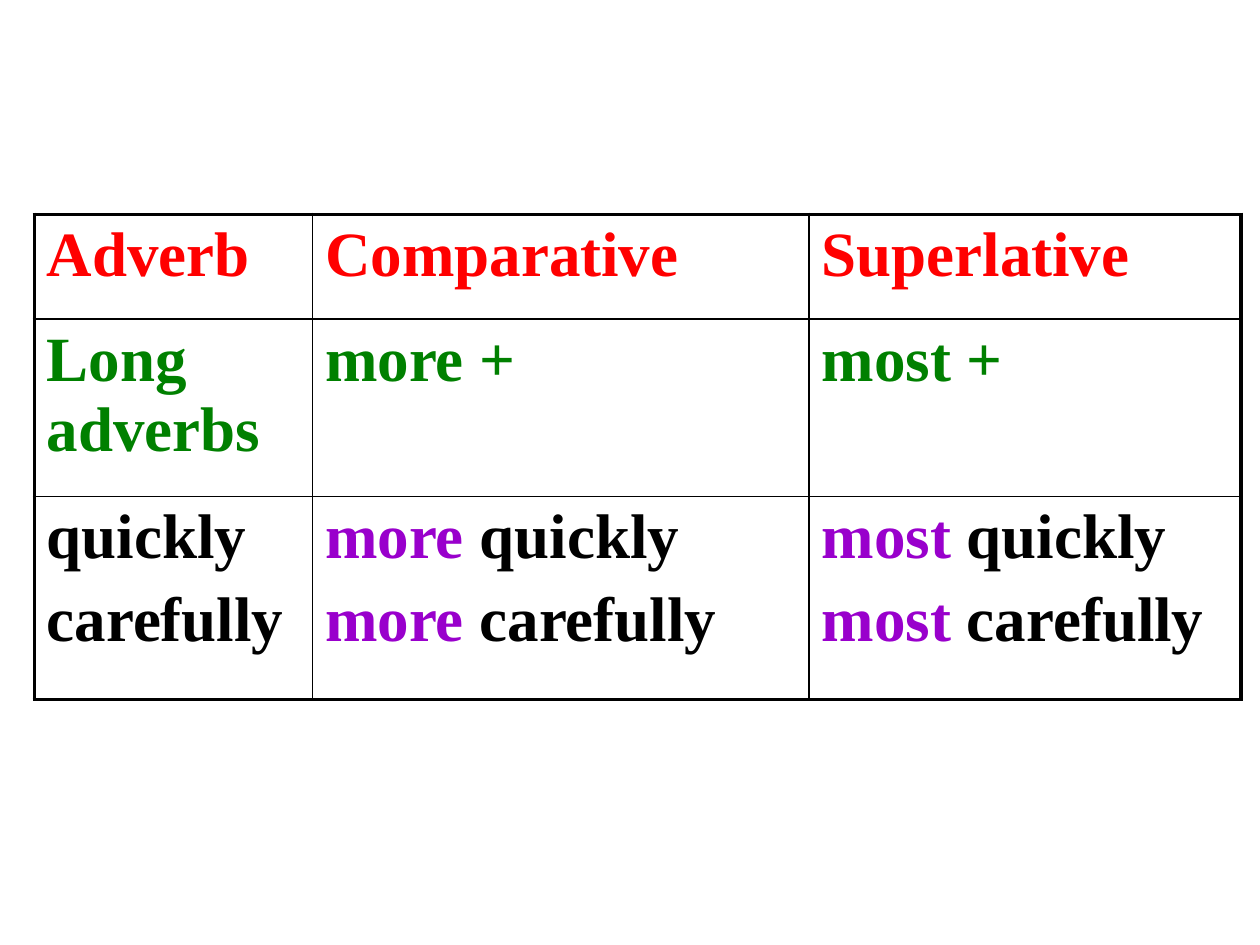
from lxml.etree import SubElement
from pptx import Presentation
from pptx.dml.color import RGBColor
from pptx.oxml.ns import qn
from pptx.util import Cm, Pt

RED = RGBColor(0xFF, 0x00, 0x00)
GREEN = RGBColor(0x00, 0x80, 0x00)
PURPLE = RGBColor(0x99, 0x00, 0xCC)
BLACK = RGBColor(0x00, 0x00, 0x00)

OUTER_LINE, INNER_LINE = Pt(2.25), Pt(1)
COLUMN_WIDTHS = [Cm(5.61), Cm(10.01), Cm(8.71)]
ROW_HEIGHTS = [Cm(2.11), Cm(3.58), Cm(4.09)]

# Each cell holds paragraphs, each paragraph holds (text, colour) pieces
adverbs = ["quickly", "carefully"]
rows = [
    [[[(heading, RED)]] for heading in ("Adverb", "Comparative", "Superlative")],
    [[[(rule, GREEN)]] for rule in ("Long adverbs", "more +", "most +")],
    [
        [[(adverb, BLACK)] for adverb in adverbs],
        [[("more", PURPLE), (" " + adverb, BLACK)] for adverb in adverbs],
        [[("most ", PURPLE), (adverb, BLACK)] for adverb in adverbs],
    ],
]


def add_border(cell, side, width):
    line = SubElement(cell._tc.get_or_add_tcPr(), qn("a:ln" + side), w=str(width))
    fill = SubElement(line, qn("a:solidFill"))
    SubElement(fill, qn("a:srgbClr"), val=str(BLACK))


def write_paragraph(paragraph, pieces):
    paragraph.space_before = Pt(7.2)
    for text, colour in pieces:
        run = paragraph.add_run()
        run.text = text
        run.font.name = "Times New Roman"
        run.font.size = Pt(36)
        run.font.bold = True
        run.font.color.rgb = colour


prs = Presentation()
prs.slide_width, prs.slide_height = Cm(25.4), Cm(19.05)
slide = prs.slides.add_slide(prs.slide_layouts[6])

# Table of comparison forms
forms = slide.shapes.add_table(
    len(rows), len(COLUMN_WIDTHS), Cm(0.69), Cm(4.32),
    sum(COLUMN_WIDTHS), sum(ROW_HEIGHTS),
).table
forms.first_row = False
forms.horz_banding = False
for column, width in zip(forms.columns, COLUMN_WIDTHS):
    column.width = width
for row, height in zip(forms.rows, ROW_HEIGHTS):
    row.height = height

# Cells: thick lines around the table, thin lines inside
last_row, last_column = len(rows) - 1, len(COLUMN_WIDTHS) - 1
for r, row in enumerate(rows):
    for c, paragraphs in enumerate(row):
        cell = forms.cell(r, c)
        edges = {"L": c == 0, "R": c == last_column, "T": r == 0, "B": r == last_row}
        for side, is_outer in edges.items():
            add_border(cell, side, OUTER_LINE if is_outer else INNER_LINE)
        cell.fill.background()

        frame = cell.text_frame
        for i, pieces in enumerate(paragraphs):
            write_paragraph(frame.add_paragraph() if i else frame.paragraphs[0], pieces)

prs.save("out.pptx")
